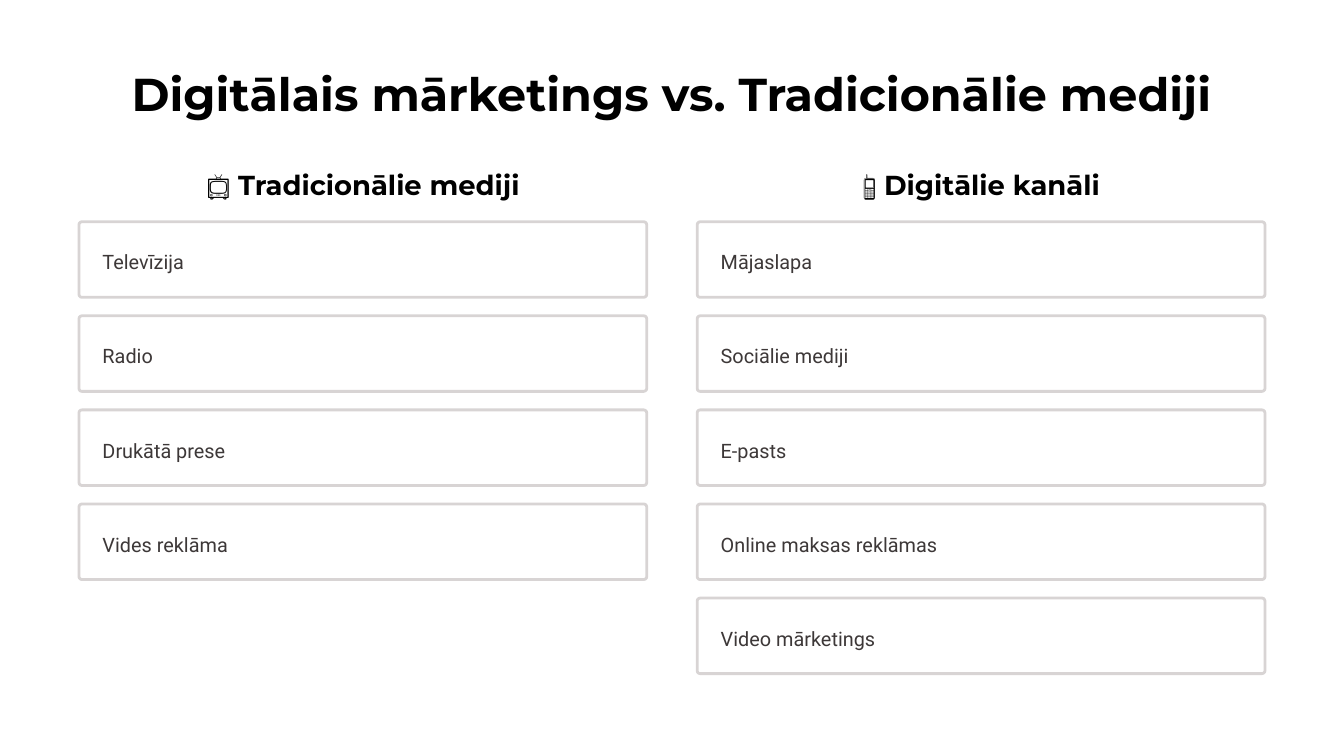
from pptx import Presentation
from pptx import util as u
from pptx.dml.color import RGBColor
from pptx.enum import shapes, text

PX = 9144
COLORS = {"page": "FFFFFF", "heading": "000000", "item": "3D3838", "border": "D8D4D4"}
CARD_TOP, CARD_PITCH = 264, 112
CARD_WIDTH, CARD_HEIGHT = 676, 90
PAD = 28
COLUMNS = [
    (94, 237, 391, "📺 Tradicionālie mediji",
     ["Televīzija", "Radio", "Drukātā prese", "Vides reklāma"]),
    (830, 1003, 331, "📱 Digitālie kanāli",
     ["Mājaslapa", "Sociālie mediji", "E-pasts", "Online maksas reklāmas", "Video mārketings"]),
]


def px(*lengths):
    return [u.Emu(length * PX) for length in lengths]


def color(name):
    return RGBColor.from_string(COLORS[name])


def add_label(slide, box, words, font_name, size, spacing, ink):
    frame = slide.shapes.add_textbox(*px(*box)).text_frame
    frame.margin_left = frame.margin_top = frame.margin_right = frame.margin_bottom = 0
    frame.word_wrap = False
    label = frame.paragraphs[0]
    label.text = words
    label.line_spacing = u.Pt(spacing)
    label.font.name = font_name
    label.font.size = u.Pt(size)
    label.font.color.rgb = color(ink)
    return label


def add_heading(slide, box, words, size, spacing):
    heading = add_label(slide, box, words, "Montserrat", size, spacing, "heading")
    heading.alignment = text.PP_ALIGN.CENTER
    heading.font.bold = True


def add_card(slide, left, top, words):
    card = slide.shapes.add_shape(shapes.MSO_SHAPE.ROUNDED_RECTANGLE,
                                  *px(left, top, CARD_WIDTH, CARD_HEIGHT))
    card.adjustments[0] = 0.04
    card.shadow.inherit = False
    card.fill.solid()
    card.fill.fore_color.rgb = color("page")
    card.line.color.rgb = color("border")
    card.line.width = u.Pt(2.4)
    item = add_label(slide, (left + PAD, top + PAD, 621, 35), words, "Roboto", 17, 24.5, "item")
    item.alignment = text.PP_ALIGN.LEFT


def main():
    deck = Presentation()
    deck.slide_width, deck.slide_height = px(1600, 900)
    slide = deck.slides.add_slide(deck.slide_layouts[6])
    slide.background.fill.solid()
    slide.background.fill.fore_color.rgb = color("page")

    add_heading(slide, (153, 75, 1293, 69),
                "Digitālais mārketings vs. Tradicionālie mediji", 39.5, 49.5)
    for left, heading_left, heading_width, heading, items in COLUMNS:
        add_heading(slide, (heading_left, 198, heading_width, 41), heading, 23.5, 29.5)
        for row, item in enumerate(items):
            add_card(slide, left, CARD_TOP + row * CARD_PITCH, item)
    deck.save("out.pptx")


if __name__ == "__main__":
    main()
